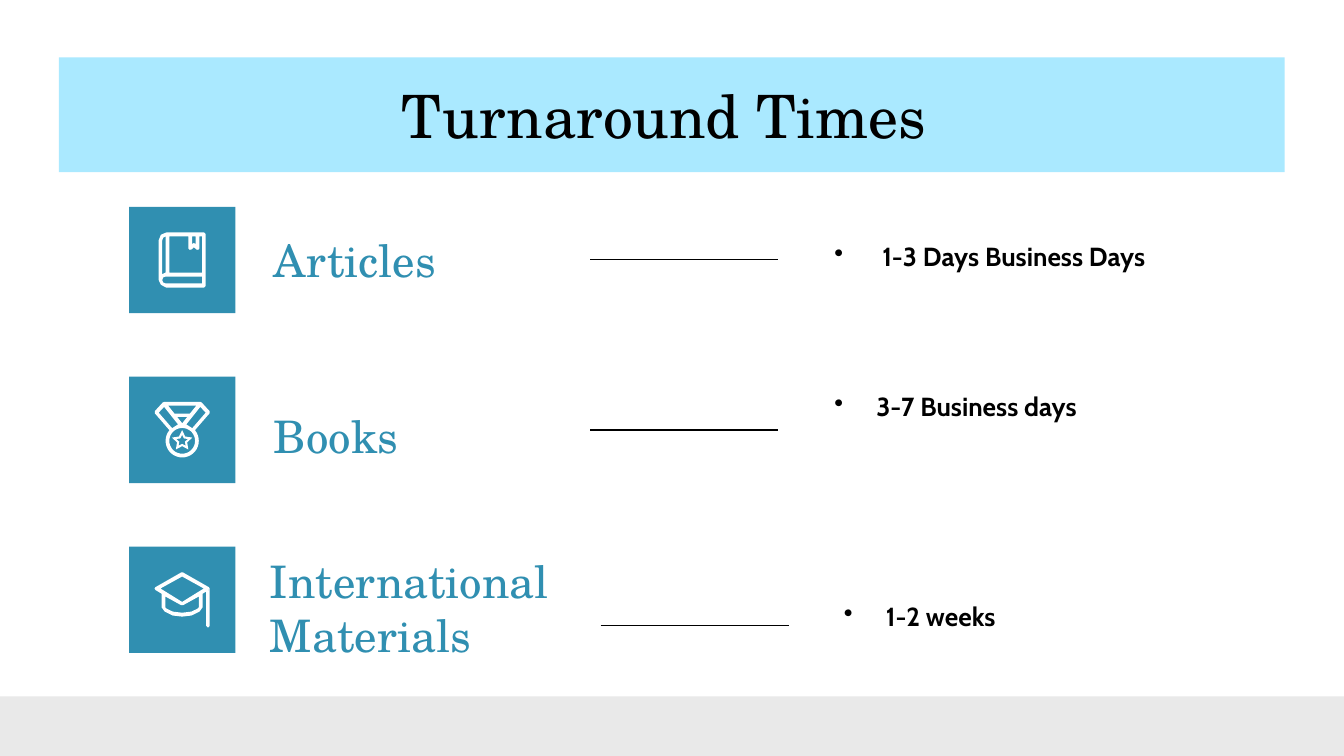
from math import cos, radians, sin
from typing import NamedTuple

from lxml.etree import SubElement
from pptx import Presentation
from pptx.dml.color import RGBColor
from pptx.enum.shapes import MSO_CONNECTOR as Connector, MSO_SHAPE as Shape
from pptx.enum.text import MSO_ANCHOR as Anchor, PP_ALIGN as Align
from pptx.oxml.ns import qn
from pptx.util import Pt

COLORS = {
    "banner": "AAE9FF",
    "accent": "308FB1",
    "footer": "E9E9E9",
    "ink": "000000",
    "white": "FFFFFF",
}
SERIF, SANS = "TeX Gyre Schola", "Cabin"
INSET = 7.2
TILE_LEFT, TILE_TOP, TILE_SIZE, TILE_PITCH = 69.1, 110.8, 57, 91
UNITS = 100

Point = tuple[float, float]
Contour = list[Point]
Box = tuple[float, float, float, float]


class Row(NamedTuple):
    """One kind of material with its icon, label, rule and turnaround time."""

    label: str
    label_box: Box
    rule_start: Point
    time: str
    time_box: Box
    time_inset: float
    icon: list[list[Contour]]


def mirror(half: Contour) -> Contour:
    """Close a right-hand outline with its reflection about the vertical axis."""
    return half + [(-x, y) for x, y in reversed(half)]


def flip(contour: Contour) -> Contour:
    """Reflect a contour about the vertical axis."""
    return [(-x, y) for x, y in contour]


def arc(radius: float, start: int, end: int, center_y: float = 5.9) -> Contour:
    """Return points along an arc centred on the vertical axis."""
    return [
        (radius * cos(radians(a)), center_y + radius * sin(radians(a)))
        for a in range(start, end + 1, 10)
    ]


def star(radius: float, center_y: float = 5.9) -> Contour:
    """Return the ten corners of a five-pointed star."""
    corners = []
    for i in range(10):
        reach = radius if i % 2 == 0 else radius / 2
        angle = radians(36 * i - 90)
        corners.append((reach * cos(angle), center_y + reach * sin(angle)))
    return corners


BOOK = [[
    [(-8.3, -14.8), (11.7, -14.8), (12.6, -13.9), (12.6, 13.9), (11.7, 14.8),
     (-8.6, 14.8), (-11.4, 13.3), (-12.6, 10.8), (-12.6, -10.6), (-11.4, -13.5)],
    [(-6.9, -12.6), (3.3, -12.6), (3.3, -6.2), (4, -5.4), (5, -5.6), (6.3, -6.8),
     (7.6, -5.6), (8.6, -5.4), (9.2, -6.2), (9.2, -12.6), (10.7, -12.6),
     (10.7, 6.8), (-6.9, 6.8)],
    [(5.3, -12.6), (7.2, -12.6), (7.2, -8.5), (6.3, -9.1), (5.3, -8.5)],
    [(-8.9, -12.6), (-8.9, 6.8), (-10.7, 7.6), (-10.7, -10.4), (-10.2, -11.9)],
    [(10.7, 8.9), (10.7, 12.6), (-8.8, 12.6), (-10.2, 12.1), (-10.7, 10.8),
     (-10.2, 9.4), (-8.8, 8.9)],
]]

RIBBON = [(9.7, -12.3), (12.6, -9.2), (5.4, -0.9), (2.2, -2.9)]
RIBBON_EDGE = [(9.7, -15), (10.5, -14.6), (14.7, -10), (14.7, -8.9)]
MEDAL = [
    [star(5.7), star(3.2)],
    [
        RIBBON_EDGE + arc(8.9, -40, 220) + flip(RIBBON_EDGE[::-1]),
        mirror([(7.6, -13), (4.1, -8.7)]),
        [(2.7, -6.9), (0, -3.5), (-2.7, -6.9)],
        RIBBON,
        flip(RIBBON),
        arc(6.9, 0, 350),
    ],
]

CAP = [[
    mirror([(0.5, -14.6), (14.3, -6.7), (14.8, -6), (14.3, -5.2), (11, -3.2),
            (11, 4.1), (9.3, 6.4), (5, 8.5), (0, 9.1)]),
    [(0, -12.4), (11.6, -6), (0, 1.2), (-11.6, -6)],
    mirror([(0.6, 2.9), (9, -1.7), (9, 4.1), (8.3, 4.8), (5, 6.4), (0, 7)]),
    [(12.9, -4.4), (14.8, -6), (14.8, 14), (13.9, 15), (12.9, 14)],
]]

ROWS = [
    Row("Articles", (139.7, 126.7, 171.4, 24.5), (316.1, 139),
        " 1-3 Days Business Days", (439.9, 121.7, 223.9, 69.8), INSET, BOOK),
    Row("Books", (139.7, 221, 171.4, 24.5), (316.1, 230.4),
        "3-7 Business days", (439.9, 192.2, 223.9, 69.8), INSET + 17, MEDAL),
    Row("International Materials", (137.5, 314.6, 171.4, 21.6), (321.8, 335),
        "1-2 weeks", (445, 314.6, 223.9, 69.8), INSET, CAP),
]


def paint(shape, color: str) -> None:
    """Give a shape a plain fill without line or shadow."""
    shape.shadow.inherit = False
    shape.fill.solid()
    shape.fill.fore_color.rgb = RGBColor.from_string(COLORS[color])
    shape.line.fill.background()


def add_block(page, box: Box, color: str) -> None:
    """Add a filled rectangle."""
    paint(page.shapes.add_shape(Shape.RECTANGLE, *map(Pt, box)), color)


def add_icon(page, icon: list[list[Contour]], center: Point) -> None:
    """Add an icon as filled outlines with holes around a centre."""
    for outline in icon:
        builder = None
        for contour in outline:
            points = [
                ((center[0] + x) * UNITS, (center[1] + y) * UNITS)
                for x, y in contour
            ]
            if builder is None:
                builder = page.shapes.build_freeform(*points[0], scale=Pt(1) / UNITS)
            else:
                builder.move_to(*points[0])
            builder.add_line_segments(points[1:], close=True)
        paint(builder.convert_to_shape(), "white")


def add_bullet(para, indent: float = 22.5) -> None:
    """Give a paragraph a hanging round bullet."""
    props = para._p.get_or_add_pPr()
    props.set("marL", str(Pt(indent)))
    props.set("indent", str(-Pt(indent)))
    color = SubElement(props, qn("a:buClr"))
    SubElement(color, qn("a:srgbClr"), val=COLORS["ink"])
    SubElement(props, qn("a:buChar"), char="•")


def add_text(page, text: str, box: Box, *, font: str, size: float,
             color: str = "ink", bold: bool = False, align=Align.LEFT,
             anchor=Anchor.TOP, top_inset: float = INSET,
             bullet: bool = False) -> None:
    """Add a wrapped text box holding one formatted paragraph."""
    frame = page.shapes.add_textbox(*map(Pt, box)).text_frame
    frame.word_wrap = True
    frame.vertical_anchor = anchor
    frame.margin_left = frame.margin_right = frame.margin_bottom = Pt(INSET)
    frame.margin_top = Pt(top_inset)
    para = frame.paragraphs[0]
    para.alignment = align
    if bullet:
        add_bullet(para)
    span = para.add_run()
    span.text = text
    span.font.name, span.font.size, span.font.bold = font, Pt(size), bold
    span.font.color.rgb = RGBColor.from_string(COLORS[color])


def add_rule(page, start: Point, length: float = 100.8) -> None:
    """Add a thin horizontal line."""
    x, y = start
    rule = page.shapes.add_connector(
        Connector.STRAIGHT, Pt(x), Pt(y), Pt(x + length), Pt(y))
    rule.line.width = Pt(0.75)
    rule.line.color.rgb = RGBColor.from_string(COLORS["ink"])
    SubElement(rule._element.spPr, qn("a:effectLst"))


def add_row(page, row: Row, index: int) -> None:
    """Draw one material row."""
    top = TILE_TOP + index * TILE_PITCH
    add_block(page, (TILE_LEFT, top, TILE_SIZE, TILE_SIZE), "accent")
    add_icon(page, row.icon, (TILE_LEFT + TILE_SIZE / 2, top + TILE_SIZE / 2))
    add_text(page, row.label, row.label_box, font=SERIF, size=24,
             color="accent", anchor=Anchor.MIDDLE)
    add_rule(page, row.rule_start)
    add_text(page, row.time, row.time_box, font=SANS, size=14, bold=True,
             top_inset=row.time_inset, bullet=True)


def main() -> None:
    """Build the turnaround times slide."""
    deck = Presentation()
    deck.slide_width, deck.slide_height = Pt(720), Pt(405)
    page = deck.slides.add_slide(deck.slide_layouts[6])
    add_block(page, (31.6, 30.7, 656.6, 61.6), "banner")
    add_text(page, "Turnaround Times ", (56.9, 35.3, 607, 45.4),
             font=SERIF, size=32, align=Align.CENTER)
    for index, row in enumerate(ROWS):
        add_row(page, row, index)
    add_block(page, (0, 373, 720, 32), "footer")
    deck.save("out.pptx")


if __name__ == "__main__":
    main()
